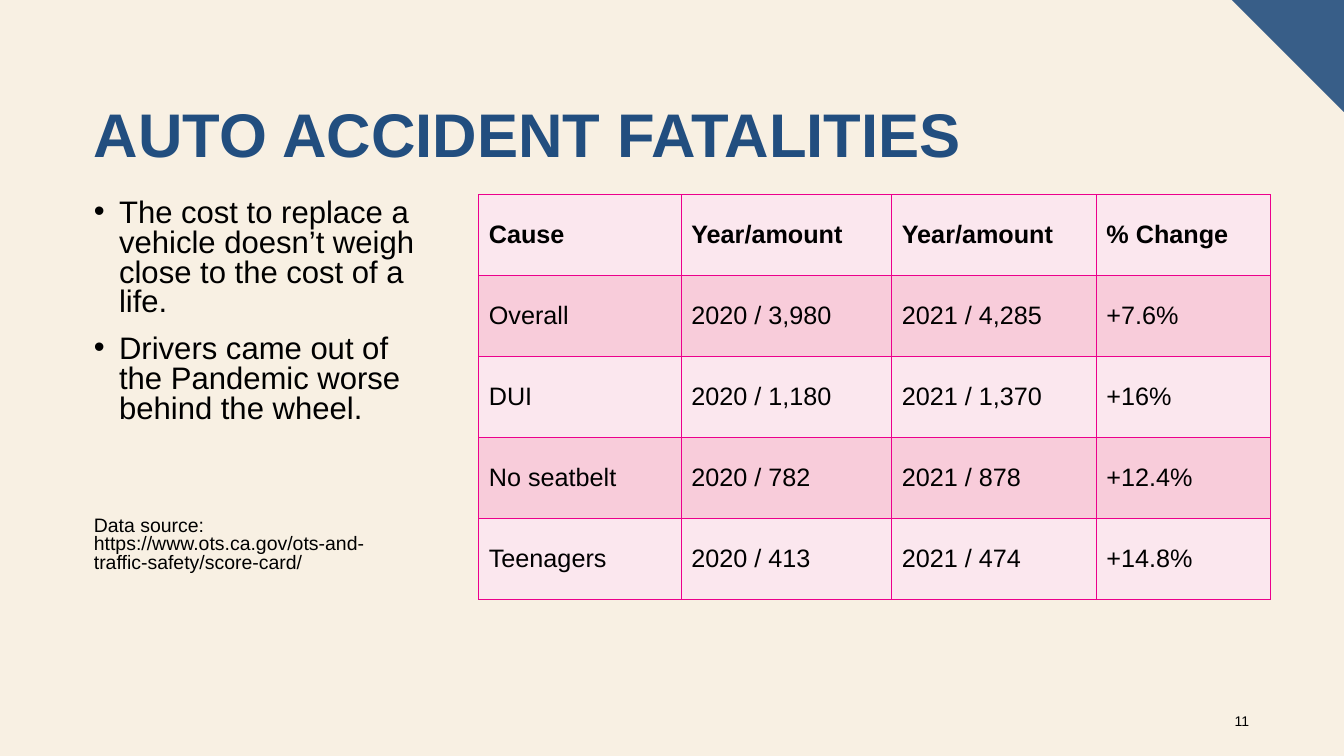
from lxml.etree import SubElement
from pptx import Presentation
from pptx.dml.color import RGBColor
from pptx.enum.text import MSO_ANCHOR, PP_ALIGN
from pptx.oxml.ns import qn
from pptx.util import Pt

TITLE = "AUTO ACCIDENT FATALITIES"
POINTS = [
    "The cost to replace a vehicle doesn’t weigh close to the cost of a life.",
    "Drivers came out of the Pandemic worse behind the wheel.",
]
SOURCE = "Data source: https://www.ots.ca.gov/ots-and-traffic-safety/score-card/"
PAGE_NUMBER = "11"
FATALITIES = [
    ("Cause", "Year/amount", "Year/amount", "% Change"),
    ("Overall", "2020 / 3,980", "2021 / 4,285", "+7.6%"),
    ("DUI", "2020 / 1,180", "2021 / 1,370", "+16%"),
    ("No seatbelt", "2020 / 782", "2021 / 878", "+12.4%"),
    ("Teenagers", "2020 / 413", "2021 / 474", "+14.8%"),
]

THEME = {
    "font": "Arial",
    "background": "F8F0E3",
    "corner": "385E88",
    "title": "224E7F",
    "text": "000000",
    "bands": ("FBE7EE", "F8CCDA"),
    "border": "EC008C",
    "title_size": 44,
    "point_size": 22.2,
    "source_size": 13.9,
    "table_size": 18,
    "page_size": 10,
}

SLIDE_W, SLIDE_H = 960, 540
CORNER = 80
LEFT, CONTENT_TOP = 60, 139
TABLE_LEFT = 342
COLUMN_WIDTHS = (144.6, 150.4, 146.2, 124.6)
ROW_HEIGHT = 57.87
BULLET_INDENT = 18


def rgb(name):
    return RGBColor.from_string(THEME.get(name, name))


def style(paragraph, size, color="text", bold=False):
    font = paragraph.font
    font.name = THEME["font"]
    font.size = Pt(THEME[size])
    font.color.rgb = rgb(color)
    font.bold = bold


def add_text(slide, box, texts, size, color="text", bold=False, spacing=None,
             after=0, align=PP_ALIGN.LEFT, anchor=MSO_ANCHOR.TOP, bullets=False):
    frame = slide.shapes.add_textbox(*map(Pt, box)).text_frame
    frame.word_wrap = True
    frame.vertical_anchor = anchor
    for index, text in enumerate(texts):
        paragraph = frame.add_paragraph() if index else frame.paragraphs[0]
        paragraph.text = text
        paragraph.alignment = align
        paragraph.line_spacing = spacing
        paragraph.space_after = Pt(after)
        if bullets:
            add_bullet(paragraph)
        style(paragraph, size, color, bold)


def add_bullet(paragraph):
    properties = paragraph._p.get_or_add_pPr()
    properties.set("marL", str(Pt(BULLET_INDENT)))
    properties.set("indent", str(-Pt(BULLET_INDENT)))
    SubElement(properties, qn("a:buFont"), typeface=THEME["font"])
    SubElement(properties, qn("a:buChar"), char="•")


def add_borders(cell):
    properties = cell._tc.get_or_add_tcPr()
    for side in ("a:lnL", "a:lnR", "a:lnT", "a:lnB"):
        line = SubElement(properties, qn(side), w=str(Pt(1)))
        fill = SubElement(line, qn("a:solidFill"))
        SubElement(fill, qn("a:srgbClr"), val=THEME["border"])


def add_corner(slide):
    builder = slide.shapes.build_freeform(Pt(SLIDE_W - CORNER), 0)
    builder.add_line_segments([(Pt(SLIDE_W), 0), (Pt(SLIDE_W), Pt(CORNER))])
    corner = builder.convert_to_shape()
    corner.shadow.inherit = False
    corner.fill.solid()
    corner.fill.fore_color.rgb = rgb("corner")
    corner.line.fill.background()


def add_fatalities(slide):
    table = slide.shapes.add_table(
        len(FATALITIES), len(COLUMN_WIDTHS), Pt(TABLE_LEFT), Pt(CONTENT_TOP),
        Pt(sum(COLUMN_WIDTHS)), Pt(ROW_HEIGHT * len(FATALITIES))).table
    for column, width in zip(table.columns, COLUMN_WIDTHS):
        column.width = Pt(width)
    for row_index, (row, values) in enumerate(zip(table.rows, FATALITIES)):
        row.height = Pt(ROW_HEIGHT)
        for cell, value in zip(row.cells, values):
            cell.text = value
            cell.vertical_anchor = MSO_ANCHOR.MIDDLE
            style(cell.text_frame.paragraphs[0], "table_size", bold=row_index == 0)
            add_borders(cell)
            cell.fill.solid()
            cell.fill.fore_color.rgb = rgb(THEME["bands"][row_index % 2])


def main():
    deck = Presentation()
    deck.slide_width, deck.slide_height = Pt(SLIDE_W), Pt(SLIDE_H)
    slide = deck.slides.add_slide(deck.slide_layouts[6])
    slide.background.fill.solid()
    slide.background.fill.fore_color.rgb = rgb("background")

    add_corner(slide)
    add_text(slide, (LEFT, 70.6, 840, 60), [TITLE], "title_size", "title",
             bold=True, spacing=0.9)
    add_text(slide, (LEFT, CONTENT_TOP, 244, 215), POINTS, "point_size",
             spacing=0.8, after=12, bullets=True)
    add_text(slide, (LEFT, 366, 244, 67), [SOURCE], "source_size", spacing=0.8)
    add_fatalities(slide)
    add_text(slide, (863.3, 500.4, 36, 28.8), [PAGE_NUMBER], "page_size",
             align=PP_ALIGN.RIGHT, anchor=MSO_ANCHOR.MIDDLE)
    deck.save("out.pptx")


if __name__ == "__main__":
    main()
